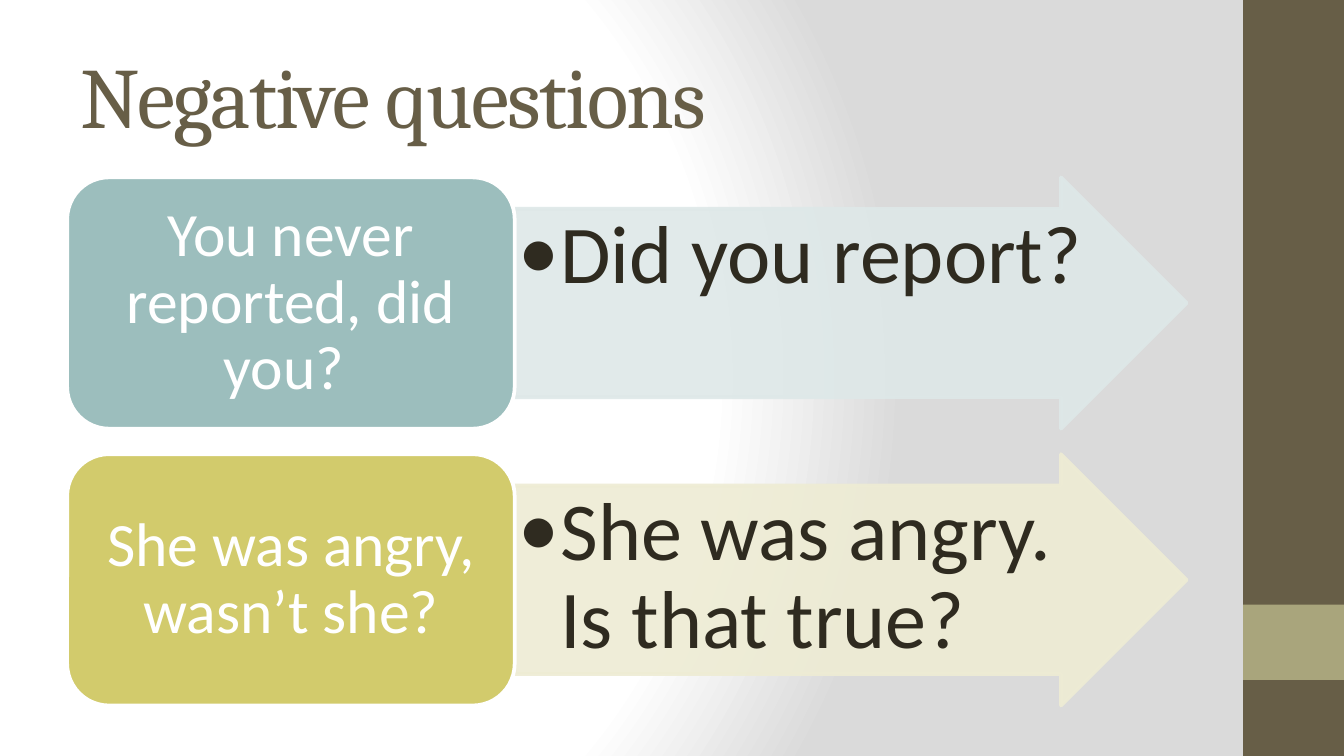
from dataclasses import dataclass

from lxml.etree import SubElement
from pptx import Presentation
from pptx.dml.color import RGBColor
from pptx.enum.shapes import MSO_SHAPE as Preset
from pptx.enum.text import MSO_ANCHOR as Anchor, PP_ALIGN as Align
from pptx.oxml import parse_xml
from pptx.oxml.ns import nsdecls, qn
from pptx.util import Inches, Pt

WHITE = RGBColor(0xFF, 0xFF, 0xFF)
BROWN = RGBColor(0x67, 0x5E, 0x47)
KHAKI = RGBColor(0xA9, 0xA5, 0x7C)
DARK = RGBColor(0x2F, 0x2B, 0x20)
TEAL = RGBColor(0x9C, 0xBE, 0xBD)
PALE_TEAL = RGBColor(0xDE, 0xE8, 0xE8)
OLIVE = RGBColor(0xD2, 0xCB, 0x6C)
PALE_OLIVE = RGBColor(0xEE, 0xEC, 0xD4)

BACKGROUND_STOPS = ((0, "FFFFFF"), (75, "FFFFFF"), (100, "DADADA"))
PAGE_WIDTH = Inches(10)
PAGE_HEIGHT = PAGE_WIDTH * 9 // 16
LEFT, TOP = 0.5, 1.32
BOX_WIDTH, ARROW_WIDTH, ROW_HEIGHT = 3.33, 5, 1.87
ROW_STEP = 2.06


@dataclass
class TextStyle:
    frame: dict
    para: dict
    font: dict
    color: RGBColor


@dataclass
class QuestionRow:
    question: str
    meaning: str
    box_color: RGBColor
    arrow_color: RGBColor


def frame_format(side: float, end: float, anchor: Anchor) -> dict:
    return {"word_wrap": True, "vertical_anchor": anchor,
            "margin_left": Inches(side), "margin_right": Inches(side),
            "margin_top": Inches(end), "margin_bottom": Inches(end)}


TITLE = TextStyle(frame_format(0.1, 0.05, Anchor.MIDDLE), {},
                  {"name": "Cambria", "size": Pt(46)}, BROWN)
QUESTION = TextStyle(frame_format(0.14, 0.07, Anchor.MIDDLE),
                     {"line_spacing": 0.9, "alignment": Align.CENTER},
                     {"name": "Calibri", "size": Pt(33)}, WHITE)
MEANING = TextStyle(frame_format(0.03, 0.03, Anchor.TOP),
                    {"line_spacing": 0.9, "level": 1},
                    {"name": "Calibri", "size": Pt(44)}, DARK)

ROWS = (
    QuestionRow("You never reported, did you? ", "Did you report?", TEAL, PALE_TEAL),
    QuestionRow("She was angry, wasn’t she?", "She was angry. Is that true?", OLIVE, PALE_OLIVE),
)


def paint_background(page) -> None:
    """Give the page a radial gradient, which python-pptx cannot set."""
    page.background.fill.gradient()
    gradient = page.element.find(".//" + qn("a:gradFill"))
    stops = "".join(
        f'<a:gs pos="{percent * 1000}"><a:srgbClr val="{color}"/></a:gs>'
        for percent, color in BACKGROUND_STOPS
    )
    gradient.getparent().replace(gradient, parse_xml(
        f'<a:gradFill rotWithShape="1" {nsdecls("a")}><a:gsLst>{stops}</a:gsLst>'
        '<a:path path="circle"><a:fillToRect l="20000" t="50000" r="100000" b="50000"/>'
        '</a:path></a:gradFill>'))


def add_block(page, preset: Preset, left: float, top: float, width: float, height: float,
              fill: RGBColor, line: RGBColor | None = None):
    block = page.shapes.add_shape(
        preset, Inches(left), Inches(top), Inches(width), Inches(height))
    block.shadow.inherit = False
    block.fill.solid()
    block.fill.fore_color.rgb = fill
    if line is None:
        block.line.fill.background()
    else:
        block.line.color.rgb = line
        block.line.width = Pt(2)
    return block


def add_text(page, text: str, left: float, top: float, width: float, height: float,
             style: TextStyle):
    """Add a one-paragraph text box and return its paragraph."""
    box = page.shapes.add_textbox(Inches(left), Inches(top), Inches(width), Inches(height))
    para = box.text_frame.paragraphs[0]
    span = para.add_run()
    span.text = text
    for target, values in ((box.text_frame, style.frame), (para, style.para),
                           (span.font, style.font)):
        for name, value in values.items():
            setattr(target, name, value)
    span.font.color.rgb = style.color
    return para


def add_bullet(para) -> None:
    properties = para._p.get_or_add_pPr()
    properties.set("marL", str(Inches(0.31)))
    properties.set("indent", str(-Inches(0.31)))
    SubElement(properties, qn("a:buFont")).set("typeface", "Calibri")
    SubElement(properties, qn("a:buChar")).set("char", "•")


def add_row(page, row: QuestionRow, top: float) -> None:
    middle = LEFT + BOX_WIDTH
    arrow = add_block(page, Preset.RIGHT_ARROW, middle, top, ARROW_WIDTH, ROW_HEIGHT,
                      row.arrow_color, row.arrow_color)
    arrow.adjustments[0] = 0.75
    arrow.adjustments[1] = 0.5
    for color in arrow.element.spPr.iter(qn("a:srgbClr")):
        SubElement(color, qn("a:alpha")).set("val", "90000")
    add_bullet(add_text(page, row.meaning, middle, top + 0.23, 4.3, 1.41, MEANING))

    add_block(page, Preset.ROUNDED_RECTANGLE, LEFT, top, BOX_WIDTH, ROW_HEIGHT,
              row.box_color, WHITE)
    add_text(page, row.question, LEFT + 0.09, top + 0.09,
             BOX_WIDTH - 0.18, ROW_HEIGHT - 0.18, QUESTION)


def main() -> None:
    deck = Presentation()
    deck.slide_width, deck.slide_height = PAGE_WIDTH, PAGE_HEIGHT
    page = deck.slides.add_slide(deck.slide_layouts[6])
    paint_background(page)
    add_block(page, Preset.RECTANGLE, 9.25, 0, 0.75, PAGE_HEIGHT.real / Inches(1), BROWN)
    add_block(page, Preset.RECTANGLE, 9.25, 4.5, 0.75, 0.56, KHAKI)

    title = add_text(page, "Negative questions", LEFT, 0.23, 8.33, 0.94, TITLE)
    title.runs[0].font._element.set("spc", "-100")
    for index, row in enumerate(ROWS):
        add_row(page, row, TOP + index * ROW_STEP)
    deck.save("out.pptx")


if __name__ == "__main__":
    main()
